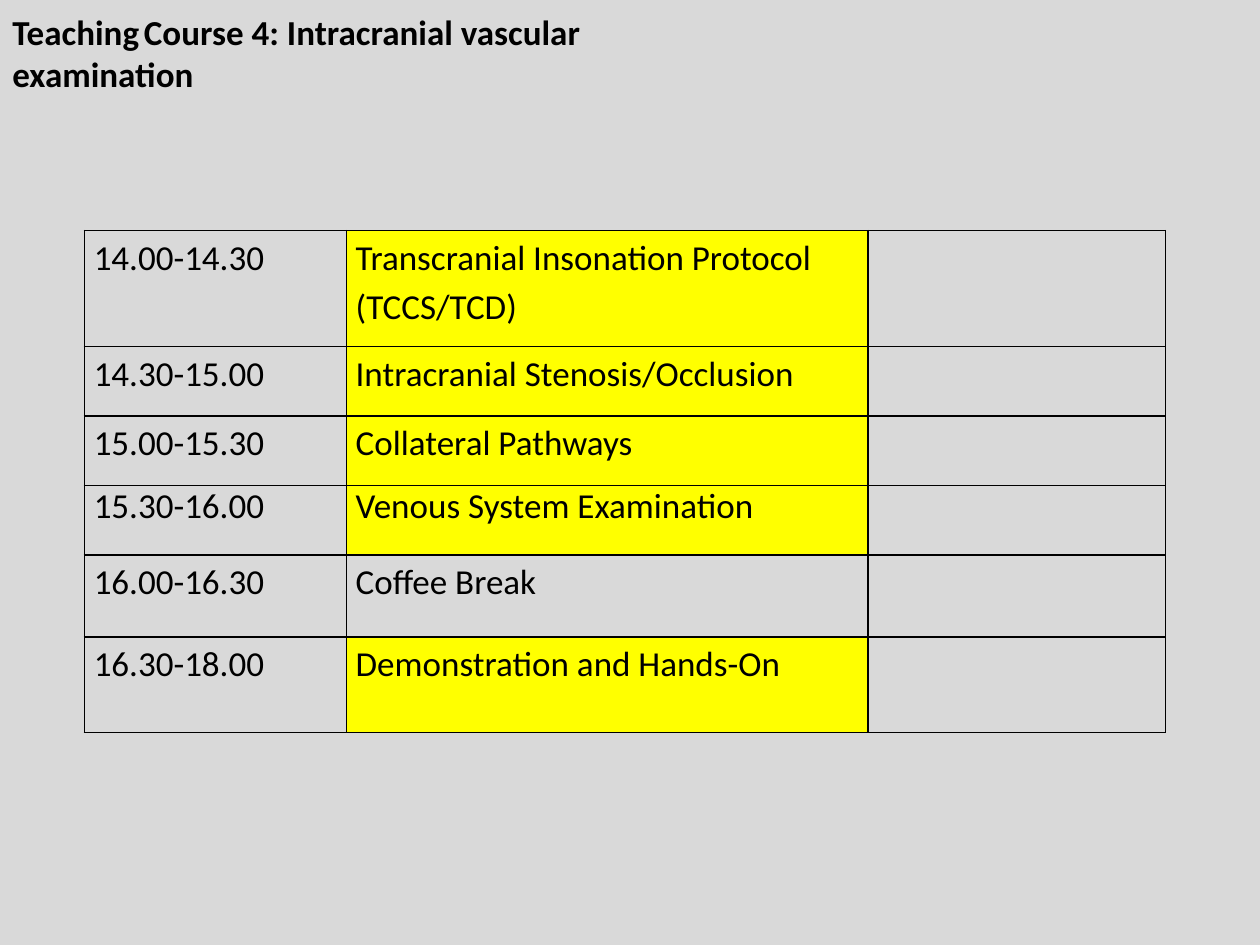
from lxml.etree import SubElement
from pptx import Presentation
from pptx.dml.color import RGBColor as RGB
from pptx.enum.text import MSO_ANCHOR as Anchor
from pptx.oxml.ns import qn
from pptx.util import Cm, Pt

COLORS = {"background": "D9D9D9", "highlight": "FFFF00", "ink": "000000"}
FONT = "Calibri"
COLUMNS = [5.28, 10.52, 5.99]
SESSIONS = [
    ("14.00-14.30", "Transcranial Insonation Protocol (TCCS/TCD)", 2.34, 1.15, True),
    ("14.30-15.00", "Intracranial Stenosis/Occlusion", 1.4, 1.15, True),
    ("15.00-15.30", "Collateral Pathways", 1.4, 1.15, True),
    ("15.30-16.00", "Venous System Examination", 1.4, 1.0, True),
    ("16.00-16.30", "Coffee Break", 1.65, 1.15, False),
    ("16.30-18.00", "Demonstration and Hands-On", 1.93, 1.15, True),
]


def add_text(p, text, size=20, bold=False, spacing=None):
    """Append a formatted run to a paragraph."""
    r = p.add_run()
    r.text = text
    r.font.name, r.font.size, r.font.bold = FONT, Pt(size), bold
    r.font.color.rgb = RGB.from_string(COLORS["ink"])
    if spacing:
        p.line_spacing = spacing


def add_borders(cell, width=1):
    """Draw a solid line on all four sides of a cell."""
    tcPr = cell._tc.get_or_add_tcPr()
    for i, side in enumerate(("lnL", "lnR", "lnT", "lnB")):
        ln = SubElement(tcPr, qn(f"a:{side}"), w=str(Pt(width)))
        fill = SubElement(ln, qn("a:solidFill"))
        SubElement(fill, qn("a:srgbClr"), val=COLORS["ink"])
        tcPr.insert(i, ln)


def add_title(s, left, top, width, height):
    """Place the course title in the given box."""
    tf = s.shapes.add_textbox(Cm(left), Cm(top), Cm(width), Cm(height)).text_frame
    tf.word_wrap = True
    tf.vertical_anchor = Anchor.MIDDLE
    p = tf.paragraphs[0]
    add_text(p, "Teaching", bold=True)
    add_text(p, " ", size=12, bold=True)
    add_text(p, "Course 4: Intracranial vascular examination", bold=True)


def add_schedule(s, left, top):
    """Place the timetable with its top left corner at the given point."""
    height = sum(session[2] for session in SESSIONS)
    table = s.shapes.add_table(len(SESSIONS), len(COLUMNS), Cm(left), Cm(top),
                               Cm(sum(COLUMNS)), Cm(height)).table
    table.first_row = table.horz_banding = False
    for column, width in zip(table.columns, COLUMNS):
        column.width = Cm(width)
    for row, (time, topic, row_height, spacing, marked) in zip(table.rows, SESSIONS):
        row.height = Cm(row_height)
        for i, (cell, text) in enumerate(zip(row.cells, (time, topic, ""))):
            cell.margin_left = cell.margin_right = Cm(0.19)
            cell.margin_top = cell.margin_bottom = 0
            if marked and i == 1:
                cell.fill.solid()
                cell.fill.fore_color.rgb = RGB.from_string(COLORS["highlight"])
            else:
                cell.fill.background()
            add_borders(cell)
            if text:
                add_text(cell.text_frame.paragraphs[0], text, spacing=spacing)


def main():
    """Build and save the slide."""
    prs = Presentation()
    prs.slide_width, prs.slide_height = Cm(25.4), Cm(19.05)
    s = prs.slides.add_slide(prs.slide_layouts[6])
    s.background.fill.solid()
    s.background.fill.fore_color.rgb = RGB.from_string(COLORS["background"])
    add_schedule(s, 1.7, 4.65)
    add_title(s, 0, 0.12, 15.75, 1.88)
    prs.save("out.pptx")


if __name__ == "__main__":
    main()
